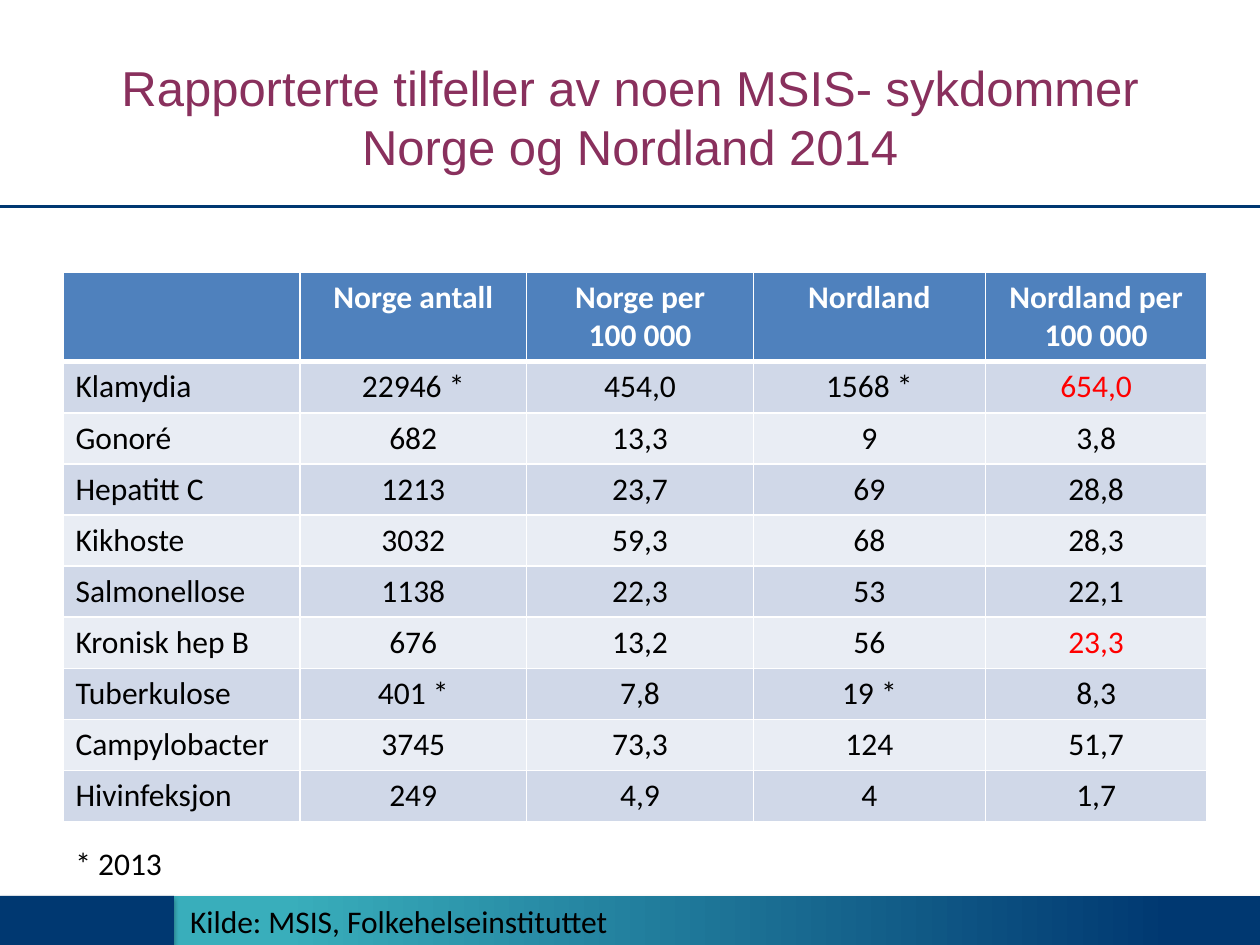
from lxml import etree
from pptx import Presentation
from pptx.dml.color import RGBColor
from pptx.enum.shapes import MSO_CONNECTOR, MSO_SHAPE
from pptx.enum.text import MSO_ANCHOR, PP_ALIGN
from pptx.oxml import parse_xml
from pptx.oxml.ns import nsdecls, qn
from pptx.util import Inches, Pt

NAVY, TEAL, PLUM = "003871", "39AEBB", "89305D"
BLUE, BAND_DARK, BAND_LIGHT = "4F81BD", "D0D8E8", "E9EDF4"
BLACK, WHITE, RED = "000000", "FFFFFF", "FF0000"

HEADERS = ["", "Norge antall", "Norge per\n100 000", "Nordland", "Nordland per\n100 000"]
ROWS = [
    ["Klamydia", "22946 *", "454,0", "1568 *", "654,0"],
    ["Gonoré", "682", "13,3", "9", "3,8"],
    ["Hepatitt C", "1213", "23,7", "69", "28,8"],
    ["Kikhoste", "3032", "59,3", "68", "28,3"],
    ["Salmonellose", "1138", "22,3", "53", "22,1"],
    ["Kronisk hep B", "676", "13,2", "56", "23,3"],
    ["Tuberkulose", "401 *", "7,8", "19 *", "8,3"],
    ["Campylobacter", "3745", "73,3", "124", "51,7"],
    ["Hivinfeksjon", "249", "4,9", "4", "1,7"],
]
COL_WIDTHS = [1.88, 1.8, 1.8, 1.84, 1.76]
HIGHLIGHTS = {"654,0", "23,3"}


def rgb(value):
    return RGBColor.from_string(value)


def add_text(p, text, color, size=18, font="Calibri", bold=False):
    for i, line in enumerate(text.split("\n")):
        if i:
            p.add_line_break()
        r = p.add_run()
        r.text = line
        r.font.name, r.font.size, r.font.bold = font, Pt(size), bold
        r.font.color.rgb = rgb(color)


def add_bar(slide, x, y, w, h):
    s = slide.shapes.add_shape(MSO_SHAPE.RECTANGLE, Inches(x), Inches(y), Inches(w), Inches(h))
    s.line.fill.background()
    s.fill.solid()
    s.fill.fore_color.rgb = rgb(NAVY)
    # Soft shadow straight below
    s.shadow.inherit = False
    effects = s._element.spPr.find(qn("a:effectLst"))
    effects.append(parse_xml(
        f'<a:outerShdw {nsdecls("a")} blurRad="{Pt(3.1)}" dist="{Pt(1.8)}" dir="5400000" '
        f'rotWithShape="0"><a:srgbClr val="{BLACK}"><a:alpha val="35000"/></a:srgbClr></a:outerShdw>'))
    return s


def add_footer(slide, x, y, w, h, split):
    s = add_bar(slide, x + split, y, w - split, h)
    s.fill.gradient()
    s.fill.gradient_angle = 0
    for stop, pos, color in zip(s.fill.gradient_stops, (0.1, 0.92), (TEAL, NAVY)):
        stop.position = pos
        stop.color.rgb = rgb(color)
    add_bar(slide, x, y, split, h)


def add_rule(slide, x, y, w):
    line = slide.shapes.add_connector(
        MSO_CONNECTOR.STRAIGHT, Inches(x), Inches(y), Inches(x + w), Inches(y))
    line.line.color.rgb = rgb(NAVY)
    line.line.width = Pt(2)
    etree.SubElement(line._element.spPr, qn("a:effectLst"))


def add_title(slide, x, y, w, h):
    s = slide.shapes.title
    s.left, s.top, s.width, s.height = Inches(x), Inches(y), Inches(w), Inches(h)
    tf = s.text_frame
    tf.word_wrap = True
    tf.vertical_anchor = MSO_ANCHOR.MIDDLE
    p = tf.paragraphs[0]
    p.alignment = PP_ALIGN.CENTER
    add_text(p, "Rapporterte tilfeller av noen MSIS- sykdommer Norge og Nordland 2014",
             PLUM, 28, "Arial")


def style_cell(cell, fill, bottom):
    tcPr = cell._tc.get_or_add_tcPr()
    # Borders come before the fill in the cell properties
    for side, width in (("L", 1), ("R", 1), ("T", 1), ("B", bottom)):
        tcPr.append(parse_xml(
            f'<a:ln{side} {nsdecls("a")} w="{Pt(width)}"><a:solidFill>'
            f'<a:srgbClr val="{WHITE}"/></a:solidFill></a:ln{side}>'))
    cell.fill.solid()
    cell.fill.fore_color.rgb = rgb(fill)


def add_case_table(slide, x, y, w, h, header_h):
    table = slide.shapes.add_table(
        len(ROWS) + 1, len(HEADERS), Inches(x), Inches(y), Inches(w), Inches(h)).table
    for col, width in zip(table.columns, COL_WIDTHS):
        col.width = Inches(width)
    for i, texts in enumerate([HEADERS] + ROWS):
        head = i == 0
        table.rows[i].height = Inches(header_h if head else (h - header_h) / len(ROWS))
        fill = BLUE if head else BAND_DARK if i % 2 else BAND_LIGHT
        for j, text in enumerate(texts):
            cell = table.cell(i, j)
            # The header's thick rule is also the top edge of the first row
            style_cell(cell, fill, 3 if head else 1)
            if i == 1:
                cell._tc.tcPr.find(qn("a:lnT")).set("w", str(Pt(3)))
            p = cell.text_frame.paragraphs[0]
            p.alignment = PP_ALIGN.CENTER if j else PP_ALIGN.LEFT
            color = WHITE if head else RED if text in HIGHLIGHTS else BLACK
            if text:
                add_text(p, text, color, bold=head)


def add_note(slide, text, x, y, w, h):
    tf = slide.shapes.add_textbox(Inches(x), Inches(y), Inches(w), Inches(h)).text_frame
    tf.word_wrap = True
    add_text(tf.paragraphs[0], text, BLACK)


def main():
    prs = Presentation()
    prs.slide_width, prs.slide_height = Inches(10), Inches(7.5)
    slide = prs.slides.add_slide(prs.slide_layouts[5])
    # Frame of the slide
    add_footer(slide, 0, 7.11, 10, 0.39, split=1.38)
    add_rule(slide, 0, 1.64, 10)
    # Content
    add_title(slide, 0.5, 0.3, 9, 1.25)
    add_case_table(slide, 0.5, 2.16, sum(COL_WIDTHS), 4.35, header_h=0.7)
    add_note(slide, "Kilde: MSIS, Folkehelseinstituttet", 1.41, 7.11, 5.05, 0.4)
    add_note(slide, "* 2013", 0.5, 6.65, 1.17, 0.4)
    prs.save("out.pptx")


if __name__ == "__main__":
    main()
